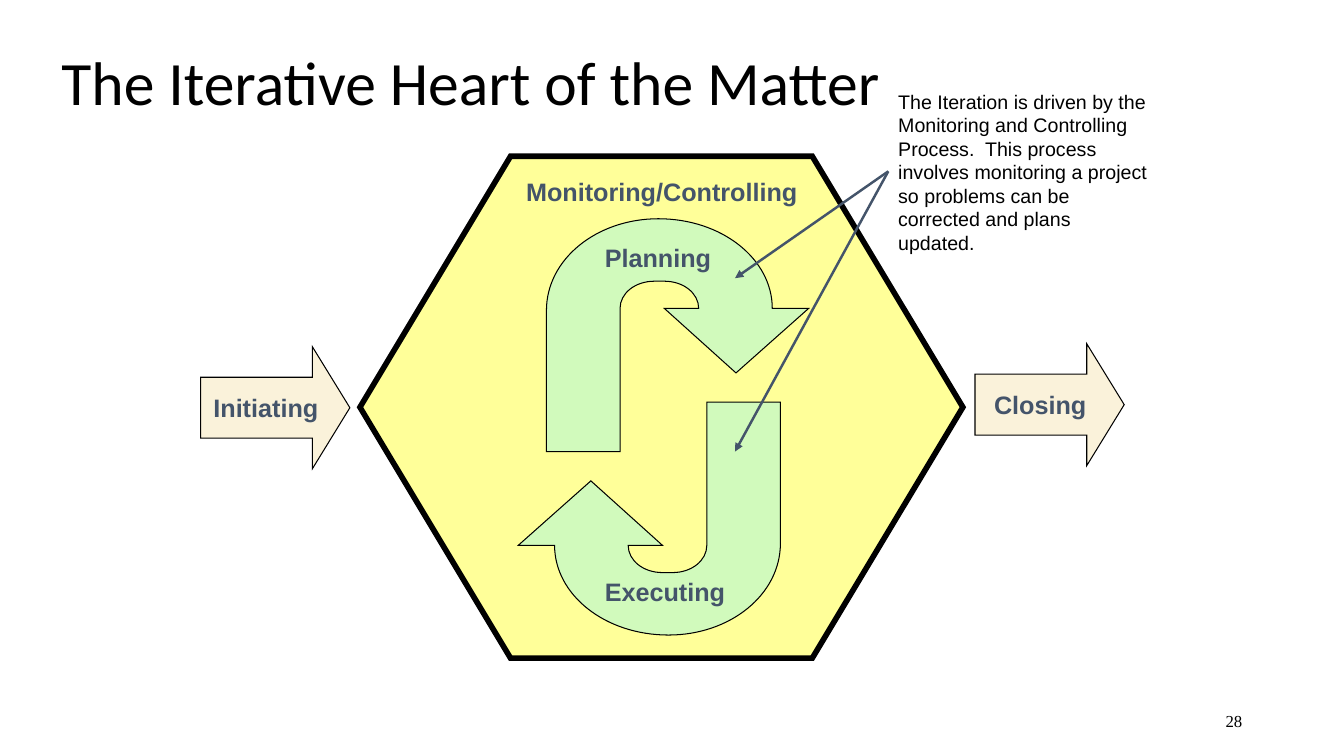
from lxml import etree
from pptx import Presentation
from pptx.dml.color import RGBColor
from pptx.enum.shapes import MSO_CONNECTOR as Connector, MSO_SHAPE as Shape
from pptx.enum.text import MSO_ANCHOR as Anchor, MSO_AUTO_SIZE as AutoSize
from pptx.enum.text import PP_ALIGN as Align
from pptx.oxml.ns import qn
from pptx.util import Inches, Pt

COLORS = {
    "black": "000000",
    "slate": "44546A",
    "yellow": "FFFF99",
    "green": "D1FABC",
    "gold": "EFCD6D",
}

# U-turn arrow in inches: two numbers draw a line to, six a Bezier curve to
UTURN_START = (7.3, 3.7)
UTURN_OUTLINE = [
    (8.02, 3.06), (7.66, 3.06),
    (7.66, 2.57, 7.16, 2.17, 6.53, 2.17),
    (5.92, 2.17, 5.42, 2.57, 5.42, 3.08),
    (5.42, 4.48), (6.15, 4.48), (6.15, 3.06),
    (6.15, 2.91, 6.3, 2.79, 6.49, 2.79),
    (6.59, 2.79),
    (6.78, 2.79, 6.93, 2.91, 6.93, 3.06),
    (6.59, 3.06),
]


def color(name):
    return RGBColor.from_string(COLORS[name])


def set_font(paragraph, size, name="Arial", ink="black", bold=False):
    font = paragraph.font
    font.size, font.name, font.bold = Pt(size), name, bold
    font.color.rgb = color(ink)


def style_shape(shape, fill, line_width):
    shape.shadow.inherit = False
    shape.fill.solid()
    shape.fill.fore_color.rgb = color(fill)
    shape.line.color.rgb = color("black")
    shape.line.width = Pt(line_width)
    # Sharp corners
    miter = etree.SubElement(shape.line._get_or_add_ln(), qn("a:miter"))
    miter.set("lim", "800000")


def add_text(slide, text, left, top, width, height, wrap=True, **font):
    box = slide.shapes.add_textbox(
        Inches(left), Inches(top), Inches(width), Inches(height))
    box.text_frame.word_wrap = wrap
    paragraph = box.text_frame.paragraphs[0]
    paragraph.text = text
    set_font(paragraph, **font)
    return box


def add_label(slide, text, left, top, width):
    label = add_text(slide, text, left, top, width, 0.4, wrap=False,
                     size=18, ink="slate", bold=True)
    label.text_frame.auto_size = AutoSize.SHAPE_TO_FIT_TEXT


def add_preset(slide, preset, left, top, width, height, fill, line_width):
    shape = slide.shapes.add_shape(
        preset, Inches(left), Inches(top), Inches(width), Inches(height))
    style_shape(shape, fill, line_width)
    return shape


def add_block_arrow(slide, text, left, top):
    arrow = add_preset(slide, Shape.RIGHT_ARROW, left, top, 1.48, 1.21,
                       "gold", 0.75)
    arrow.adjustments[1] = 0.307
    # Fill opacity of 25 percent
    rgb = arrow.fill._xPr.find(qn("a:solidFill")).find(qn("a:srgbClr"))
    etree.SubElement(rgb, qn("a:alpha")).set("val", "25000")
    frame = arrow.text_frame
    frame.word_wrap = False
    frame.vertical_anchor = Anchor.MIDDLE
    paragraph = frame.paragraphs[0]
    paragraph.text = text
    paragraph.alignment = Align.CENTER
    set_font(paragraph, 18, ink="slate", bold=True)


def bend_segment(line_to, controls, left, top):
    """Turn a straight segment into a curve with two control points."""
    line_to.tag = qn("a:cubicBezTo")
    for index in (0, 1):
        x, y = controls[2 * index:2 * index + 2]
        point = etree.Element(qn("a:pt"))
        point.set("x", str(Inches(x) - left))
        point.set("y", str(Inches(y) - top))
        line_to.insert(index, point)


def add_uturn(slide, dx=0, dy=0, rotation=0):
    ends = [(Inches(s[-2]), Inches(s[-1])) for s in UTURN_OUTLINE]
    builder = slide.shapes.build_freeform(*(Inches(v) for v in UTURN_START))
    builder.add_line_segments(ends, close=True)
    uturn = builder.convert_to_shape()
    segments = list(uturn._element.iter(qn("a:lnTo")))
    for line_to, segment in zip(segments, UTURN_OUTLINE):
        if len(segment) == 6:
            bend_segment(line_to, segment[:4], uturn.left, uturn.top)
    style_shape(uturn, "green", 0.75)
    uturn.left += Inches(dx)
    uturn.top += Inches(dy)
    uturn.rotation = rotation


def add_pointer(slide, start, end):
    pointer = slide.shapes.add_connector(
        Connector.STRAIGHT, *(Inches(value) for value in start + end))
    pointer.line.color.rgb = color("slate")
    pointer.line.width = Pt(1.75)
    line = pointer.line._get_or_add_ln()
    etree.SubElement(line, qn("a:tailEnd")).set("type", "triangle")
    etree.SubElement(pointer._element.spPr, qn("a:effectLst"))


def set_title(slide, text):
    title = slide.shapes.title
    title.left, title.top = Inches(0.51), Inches(0.22)
    title.width, title.height = Inches(9.25), Inches(1.25)
    title.text_frame.vertical_anchor = Anchor.MIDDLE
    paragraph = title.text_frame.paragraphs[0]
    paragraph.text = text
    paragraph.alignment = Align.LEFT
    paragraph.line_spacing = 0.9
    set_font(paragraph, 44, name="Calibri")


def main():
    deck = Presentation()
    deck.slide_width, deck.slide_height = Inches(13.33), Inches(7.5)
    slide = deck.slides.add_slide(deck.slide_layouts[5])

    # Title and page number
    set_title(slide, "The Iterative Heart of the Matter")
    page_number = add_text(slide, "28", 9.42, 6.95, 3, 0.4,
                           size=12, name="Times New Roman")
    page_number.text_frame.vertical_anchor = Anchor.MIDDLE
    page_number.text_frame.paragraphs[0].alignment = Align.RIGHT

    # Monitoring hexagon around the planning and executing loop
    hexagon = add_preset(slide, Shape.HEXAGON, 3.57, 1.55, 5.98, 4.98,
                         "yellow", 4)
    hexagon.adjustments[0] = 0.3
    add_label(slide, "Monitoring/Controlling", 5.12, 1.7, 2.9)
    add_uturn(slide)
    add_label(slide, "Planning", 5.9, 2.36, 1.26)
    add_uturn(slide, dx=-0.28, dy=1.82, rotation=180)
    add_label(slide, "Executing", 5.9, 5.67, 1.4)

    # Way in and way out
    add_block_arrow(slide, "Initiating", 1.99, 3.44)
    add_block_arrow(slide, "Closing", 9.67, 3.41)

    # Remark with pointers to both halves of the loop
    remark = add_text(
        slide, "The Iteration is driven by the Monitoring and Controlling "
        "Process.  This process involves monitoring a project so problems "
        "can be corrected and plans updated.",
        8.81, 0.84, 2.71, 1.99, size=14)
    remark.text_frame.auto_size = AutoSize.SHAPE_TO_FIT_TEXT
    for target in ((7.29, 2.76), (7.29, 4.48)):
        add_pointer(slide, (8.81, 1.7), target)

    deck.save("out.pptx")


if __name__ == "__main__":
    main()
